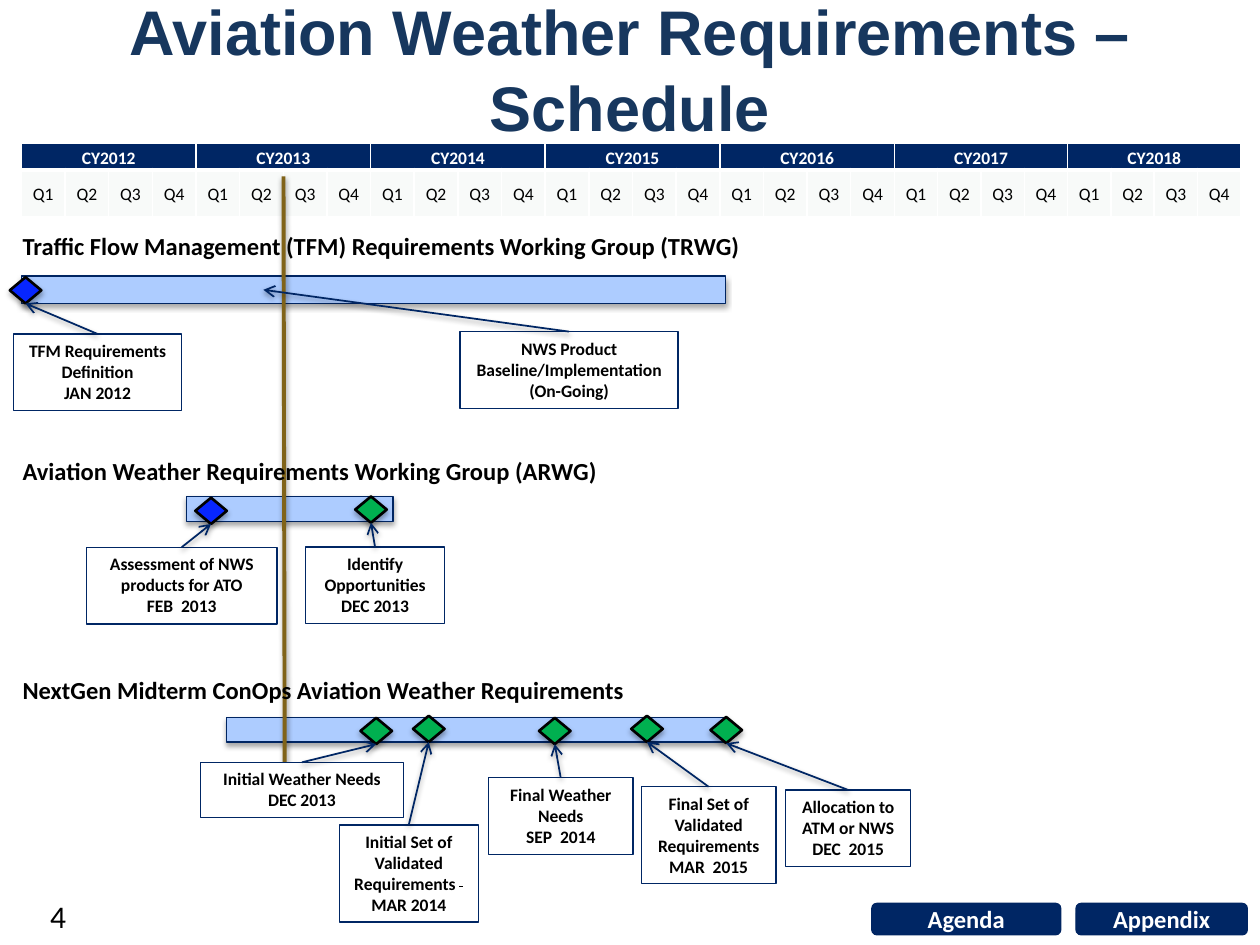
from lxml import etree
from pptx import Presentation
from pptx.dml.color import RGBColor
from pptx.enum import shapes, text
from pptx.oxml import ns
from pptx.util import Pt

NAVY = RGBColor(0x00, 0x26, 0x64)
EDGE = RGBColor(0x00, 0x25, 0x62)
TITLE = RGBColor(0x17, 0x37, 0x5E)
BAR = RGBColor(0xAD, 0xCC, 0xFF)
PALE = RGBColor(0xF8, 0xFA, 0xF9)
BLUE = RGBColor(0x07, 0x26, 0xFF)
GREEN = RGBColor(0x00, 0xB0, 0x50)
GOLD = RGBColor(0x80, 0x63, 0x19)
BLACK = RGBColor(0, 0, 0)
WHITE = RGBColor(255, 255, 255)

YEARS = ["CY2012", "CY2013", "CY2014", "CY2015", "CY2016", "CY2017", "CY2018"]
QUARTERS = ["Q1", "Q2", "Q3", "Q4"]
COLUMN_WIDTHS = [24.95] * 20 + [24.75] * 8

HEADINGS = [
    ("Traffic Flow Management (TFM) Requirements Working Group (TRWG)", 128.2, 485.3),
    ("Aviation Weather Requirements Working Group (ARWG)", 257, 398.2),
    ("NextGen Midterm ConOps Aviation Weather Requirements", 382.3, 421.2),
]
BARS = [(12.2, 157.7, 402.5, 15.8), (106.6, 283.7, 118.1, 14.2), (129.6, 410.1, 285.1, 13.9)]
TODAY = (162, 100.8, 162.7, 440.6)

MILESTONES = [
    (["TFM Requirements Definition", "JAN 2012"], (7.7, 190.8, 96, 43.9), (5.6, 158.4), BLUE),
    (["Assessment of NWS products for ATO", "FEB  2013"], (49.4, 312.7, 108.9, 43.9), (111.6, 284.4), BLUE),
    (["Identify Opportunities\vDEC 2013"], (174.6, 312.5, 79.4, 43.9), (203, 283.7), GREEN),
    (["Initial Weather Needs\vDEC 2013"], (114.5, 435.6, 116.1, 31.7), (206, 410.2), GREEN),
    (["Initial Set of Validated Requirements ", "MAR 2014"], (193.9, 471.4, 79.4, 55.5), (236, 409), GREEN),
    (["Final Weather Needs", "SEP  2014"], (279, 444.4, 82.8, 43.9), (308, 410.2), GREEN),
    (["Final Set of Validated Requirements", "MAR  2015"], (366.5, 449.6, 76.9, 55.5), (360.7, 409), GREEN),
    (["Allocation to ATM or NWS", "DEC  2015"], (449, 451.4, 71.3, 43.9), (406, 409.7), GREEN),
]
ONGOING = (["NWS Product Baseline/Implementation", "(On-Going)"], (262.9, 189.5, 124.6, 43.9))
ONGOING_TARGET = (150.5, 165.6)
BUTTONS = [("Agenda", 498.2, 108), ("Appendix", 614.9, 97.9)]


def put(tf, paragraphs, size=10, color=BLACK, bold=True, font="Calibri",
        align=text.PP_ALIGN.CENTER, spacing=None):
    for i, line in enumerate(paragraphs):
        p = tf.paragraphs[0] if i == 0 else tf.add_paragraph()
        p.text = line
        p.alignment = align
        p.line_spacing = spacing
        for r in p.runs:
            r.font.size, r.font.bold, r.font.name = Pt(size), bold, font
            r.font.color.rgb = color


def add_effects(sp, alpha=None, dist=1.8):
    effects = etree.SubElement(sp._element.spPr, ns.qn("a:effectLst"))
    if alpha:
        shadow = etree.SubElement(effects, ns.qn("a:outerShdw"), blurRad=str(Pt(3.1)),
                                  dist=str(Pt(dist)), dir="5400000", rotWithShape="0")
        clr = etree.SubElement(shadow, ns.qn("a:srgbClr"), val="000000")
        etree.SubElement(clr, ns.qn("a:alpha"), val=str(alpha * 1000))


def add_box(kind, at, fill, line, width=0.75, shadow=None):
    sp = s.shapes.add_shape(kind, *map(Pt, at))
    sp.fill.solid()
    sp.fill.fore_color.rgb = fill
    sp.line.color.rgb = line
    sp.line.width = Pt(width)
    add_effects(sp, shadow)
    return sp


def add_line(ends, color, width, arrow=False):
    c = s.shapes.add_connector(shapes.MSO_CONNECTOR.STRAIGHT, *map(Pt, ends))
    c.line.color.rgb = color
    c.line.width = Pt(width)
    if arrow:
        etree.SubElement(c.line._get_or_add_ln(), ns.qn("a:tailEnd"), type="arrow")
    add_effects(c, 38, 1.6)
    return c


def add_callout(lines, at):
    sp = add_box(shapes.MSO_SHAPE.RECTANGLE, at, WHITE, NAVY)
    tf = sp.text_frame
    tf.word_wrap = True
    tf.auto_size = text.MSO_AUTO_SIZE.SHAPE_TO_FIT_TEXT
    tf.vertical_anchor = text.MSO_ANCHOR.TOP
    put(tf, lines)
    if lines[0].endswith(" "):
        r = tf.paragraphs[0].add_run()
        r.text = " "
        r.font.size, r.font.name = Pt(10), "Calibri"
        r.font.color.rgb = BLACK
        r.font._element.set("strike", "sngStrike")
    return sp


def add_label(line, at, **fmt):
    tf = s.shapes.add_textbox(*map(Pt, at)).text_frame
    tf.word_wrap = True
    put(tf, [line], align=text.PP_ALIGN.LEFT, **fmt)


def style_cell(cell, line, fill, color, bold, bottom):
    cell.fill.background()
    tcPr = cell._tc.get_or_add_tcPr()
    for child in list(tcPr):
        tcPr.remove(child)
    for side, width in (("lnL", 1), ("lnR", 1), ("lnT", 1), ("lnB", bottom)):
        ln = etree.SubElement(tcPr, ns.qn("a:" + side), w=str(Pt(width)))
        solid = etree.SubElement(ln, ns.qn("a:solidFill"))
        etree.SubElement(solid, ns.qn("a:srgbClr"), val=str(WHITE))
    cell.fill.solid()
    cell.fill.fore_color.rgb = fill
    cell.margin_left = cell.margin_right = Pt(4.9)
    cell.margin_top = cell.margin_bottom = 0
    cell.vertical_anchor = text.MSO_ANCHOR.MIDDLE
    if line:
        put(cell.text_frame, [line], color=color, bold=bold, spacing=1.15)


prs = Presentation()
prs.slide_width, prs.slide_height = Pt(720), Pt(540)
s = prs.slides.add_slide(prs.slide_layouts[5])

title = s.shapes.title
title.left, title.top, title.width, title.height = map(Pt, (10.8, 22.3, 698.4, 33.1))
title.text_frame.auto_size = text.MSO_AUTO_SIZE.NONE
title.text_frame.vertical_anchor = text.MSO_ANCHOR.MIDDLE
put(title.text_frame, ["Aviation Weather Requirements – Schedule"], size=36, color=TITLE, font="Arial")

for name, left, width in BUTTONS:
    sp = add_box(shapes.MSO_SHAPE.ROUNDED_RECTANGLE, (left, 516.2, width, 18), NAVY, EDGE)
    sp.text_frame.vertical_anchor = text.MSO_ANCHOR.MIDDLE
    put(sp.text_frame, [name], size=14, color=WHITE)

table = s.shapes.add_table(2, len(COLUMN_WIDTHS), Pt(12.2), Pt(82.1), Pt(697), Pt(41.8)).table
for column, width in zip(table.columns, COLUMN_WIDTHS):
    column.width = Pt(width)
table.rows[0].height, table.rows[1].height = Pt(15.1), Pt(26.7)
for i in range(len(COLUMN_WIDTHS)):
    year, quarter = divmod(i, len(QUARTERS))
    style_cell(table.cell(0, i), "" if quarter else YEARS[year], NAVY, WHITE, True, 3)
    style_cell(table.cell(1, i), QUARTERS[quarter], PALE, BLACK, False, 1)
    if quarter == 3:
        table.cell(0, i - 3).merge(table.cell(0, i))

for at in BARS:
    add_box(shapes.MSO_SHAPE.RECTANGLE, at, BAR, EDGE, shadow=35)
add_line(TODAY, GOLD, 2.25)

for line, top, width in HEADINGS:
    add_label(line, (5.8, top, width, 24.5), size=14)
add_label("4", (21.6, 509, 54, 18), size=18, bold=False)

for lines, at, (left, top), color in MILESTONES:
    callout = add_callout(lines, at)
    diamond = add_box(shapes.MSO_SHAPE.DIAMOND, (left, top, 18, 15), color, BLACK, 1.5, 35)
    c = add_line((0, 0, 0, 0), NAVY, 1, arrow=True)
    c.begin_connect(callout, 0)
    c.end_connect(diamond, 2)

callout = add_callout(*ONGOING)
c = add_line((0, 0) + ONGOING_TARGET, NAVY, 1, arrow=True)
c.begin_connect(callout, 0)

prs.save("out.pptx")
